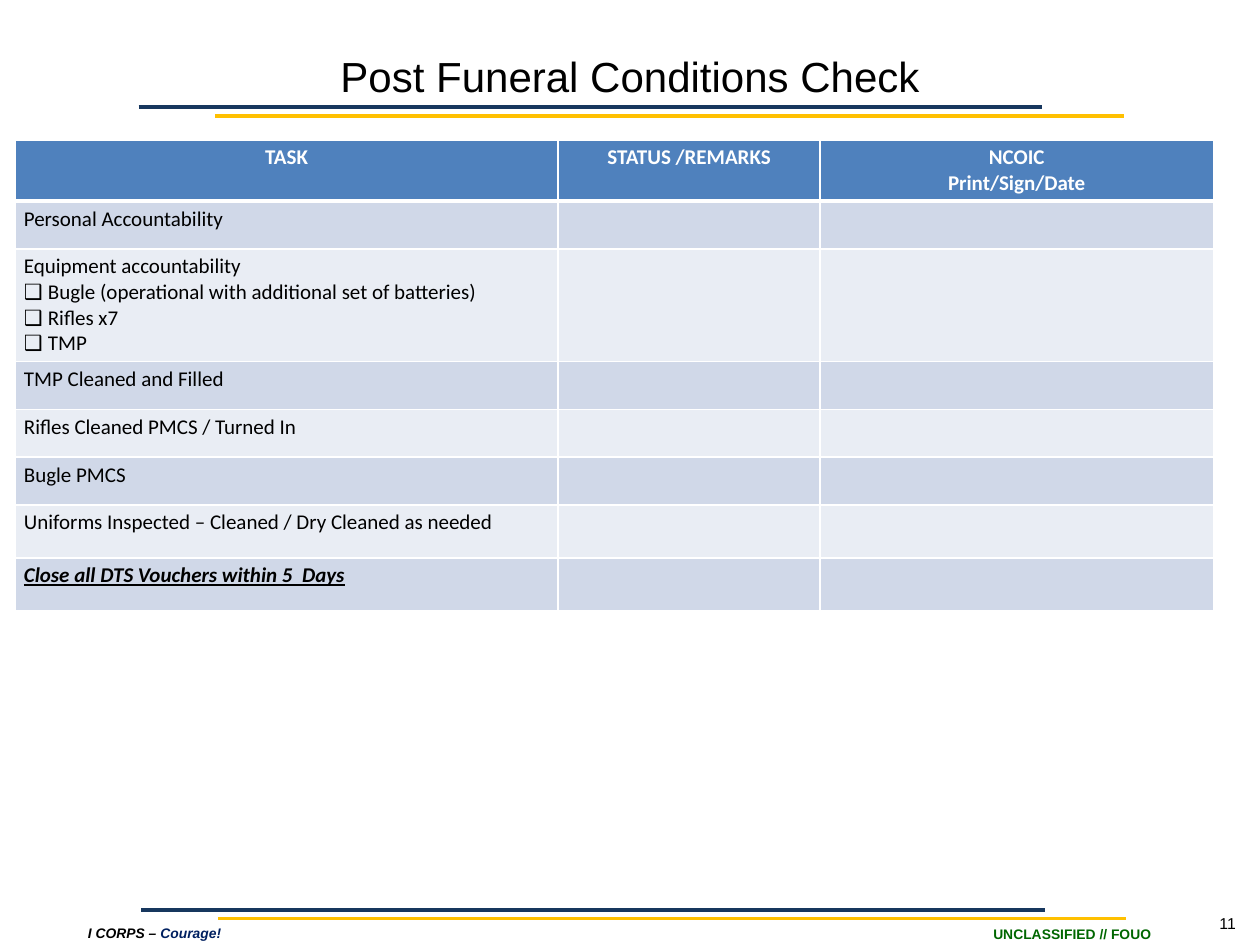
from lxml.etree import SubElement
from pptx import Presentation
from pptx.dml.color import RGBColor
from pptx.enum.shapes import MSO_CONNECTOR
from pptx.enum.text import MSO_ANCHOR, PP_ALIGN
from pptx.oxml.ns import qn
from pptx.util import Inches, Pt

NAVY, GOLD, WHITE = "17375E", "FFC000", "FFFFFF"
HEAD, BANDS = "4F81BD", ("D0D8E8", "E9EDF4")
COLS = (4.31, 2.08, 3.12)
BOX = "❑ "
HEADS = ("TASK", "STATUS /REMARKS", "NCOIC\nPrint/Sign/Date")
TASKS = (
    ("Personal Accountability", 0.38),
    ("Equipment accountability\n"
     "❑ Bugle (operational with additional set of batteries)\n"
     "❑ Rifles x7\n"
     "❑ TMP", 0.87),
    ("TMP Cleaned and Filled", 0.38),
    ("Rifles Cleaned PMCS / Turned In", 0.38),
    ("Bugle PMCS", 0.38),
    ("Uniforms Inspected – Cleaned / Dry Cleaned as needed", 0.42),
    ("Close all DTS Vouchers within 5  Days", 0.42),
)


def color(code):
    return RGBColor.from_string(code)


def bullet(para):
    """Give a paragraph a checkbox bullet with a hanging indent."""
    props = para._p.get_or_add_pPr()
    props.set("marL", str(Inches(0.19)))
    props.set("indent", str(-Inches(0.19)))
    SubElement(props, qn("a:buFont"), typeface="Wingdings 2")
    props[-1].set("typeface", "Arial")
    SubElement(props, qn("a:buChar"), char=BOX.strip())


def style(run, size, font="Arial", ink="000000", bold=False, italic=False, under=False):
    face = run.font
    face.name, face.size = font, Pt(size)
    face.bold, face.italic, face.underline = bold, italic, under
    face.color.rgb = color(ink)


def write(frame, text, align=PP_ALIGN.LEFT, **fmt):
    """Fill a frame, one paragraph a line; lines led by a box become bullets."""
    for num, line in enumerate(text.split("\n")):
        para = frame.add_paragraph() if num else frame.paragraphs[0]
        para.alignment = align
        if line.startswith(BOX):
            bullet(para)
        run = para.add_run()
        run.text = line.removeprefix(BOX)
        style(run, **fmt)


def label(slide, x, y, w, h, text, **fmt):
    frame = slide.shapes.add_textbox(Inches(x), Inches(y), Inches(w), Inches(h)).text_frame
    frame.word_wrap = True
    write(frame, text, **fmt)
    return frame


def rules(slide, x, y):
    """Draw the navy rule and the gold one set off below it."""
    for dx, dy, w, ink in ((0, 0, 7.17, NAVY), (0.61, 0.07, 7.21, GOLD)):
        line = slide.shapes.add_connector(
            MSO_CONNECTOR.STRAIGHT, Inches(x + dx), Inches(y + dy),
            Inches(x + dx + w), Inches(y + dy))
        line.line.color.rgb = color(ink)
        line.line.width = Pt(2.25)
        SubElement(line._element.spPr, qn("a:effectLst"))


def heading(slide, x, y, w, h):
    title = slide.shapes.title
    title.left, title.top = Inches(x), Inches(y)
    title.width, title.height = Inches(w), Inches(h)
    title.text_frame.vertical_anchor = MSO_ANCHOR.MIDDLE
    write(title.text_frame, "Post Funeral Conditions Check", align=PP_ALIGN.CENTER, size=24)
    rules(slide, x + 1.1, y + h)


def border(cell, head):
    props = cell._tc.get_or_add_tcPr()
    for num, side in enumerate(("lnL", "lnR", "lnT", "lnB")):
        wide = 3 if head and side == "lnB" else 1
        line = props.makeelement(qn(f"a:{side}"), {"w": str(Pt(wide))})
        fill = SubElement(line, qn("a:solidFill"))
        SubElement(fill, qn("a:srgbClr"), val=WHITE)
        props.insert(num, line)


def put(cell, text, fill, head=False, **fmt):
    cell.margin_left = cell.margin_right = Inches(0.07)
    cell.margin_top = cell.margin_bottom = Inches(0.04)
    cell.fill.solid()
    cell.fill.fore_color.rgb = color(fill)
    border(cell, head)
    write(cell.text_frame, text, size=12, font="Calibri", **fmt)


def checks(slide, x, y):
    highs = [0.47] + [high for _, high in TASKS]
    table = slide.shapes.add_table(
        len(highs), len(COLS), Inches(x), Inches(y),
        Inches(sum(COLS)), Inches(sum(highs))).table
    for col, wide in zip(table.columns, COLS):
        col.width = Inches(wide)
    for row, high in zip(table.rows, highs):
        row.height = Inches(high)
    for cell, text in zip(table.rows[0].cells, HEADS):
        put(cell, text, HEAD, head=True, align=PP_ALIGN.CENTER, ink=WHITE, bold=True)
    for num, (task, _) in enumerate(TASKS):
        last = num == len(TASKS) - 1
        for cell, text in zip(table.rows[num + 1].cells, (task, "", "")):
            put(cell, text, BANDS[num % 2], bold=last, italic=last, under=last)


def footer(slide, x, y):
    rules(slide, x + 1.12, y + 0.02)
    mark = label(slide, x + 7.51, y + 0.15, 2, 0.13, "UNCLASSIFIED // FOUO",
                 align=PP_ALIGN.CENTER, size=7.9, ink="006600", bold=True)
    mark.margin_top = mark.margin_bottom = 0
    mark.vertical_anchor = MSO_ANCHOR.MIDDLE
    motto = label(slide, x + 0.6, y + 0.09, 1.87, 0.24, "I CORPS – ",
                  size=7.9, bold=True, italic=True)
    run = motto.paragraphs[0].add_run()
    run.text = "Courage!"
    style(run, 7.9, ink="002060", bold=True, italic=True)
    label(slide, x + 9.58, y, 0.42, 0.25, "11", size=9)


def main():
    deck = Presentation()
    deck.slide_width, deck.slide_height = Inches(10), Inches(7.5)
    slide = deck.slides.add_slide(deck.slide_layouts[5])
    heading(slide, 0, 0.35, 10, 0.5)
    checks(slide, 0.12, 1.11)
    footer(slide, 0, 7.2)
    deck.save("out.pptx")


if __name__ == "__main__":
    main()
